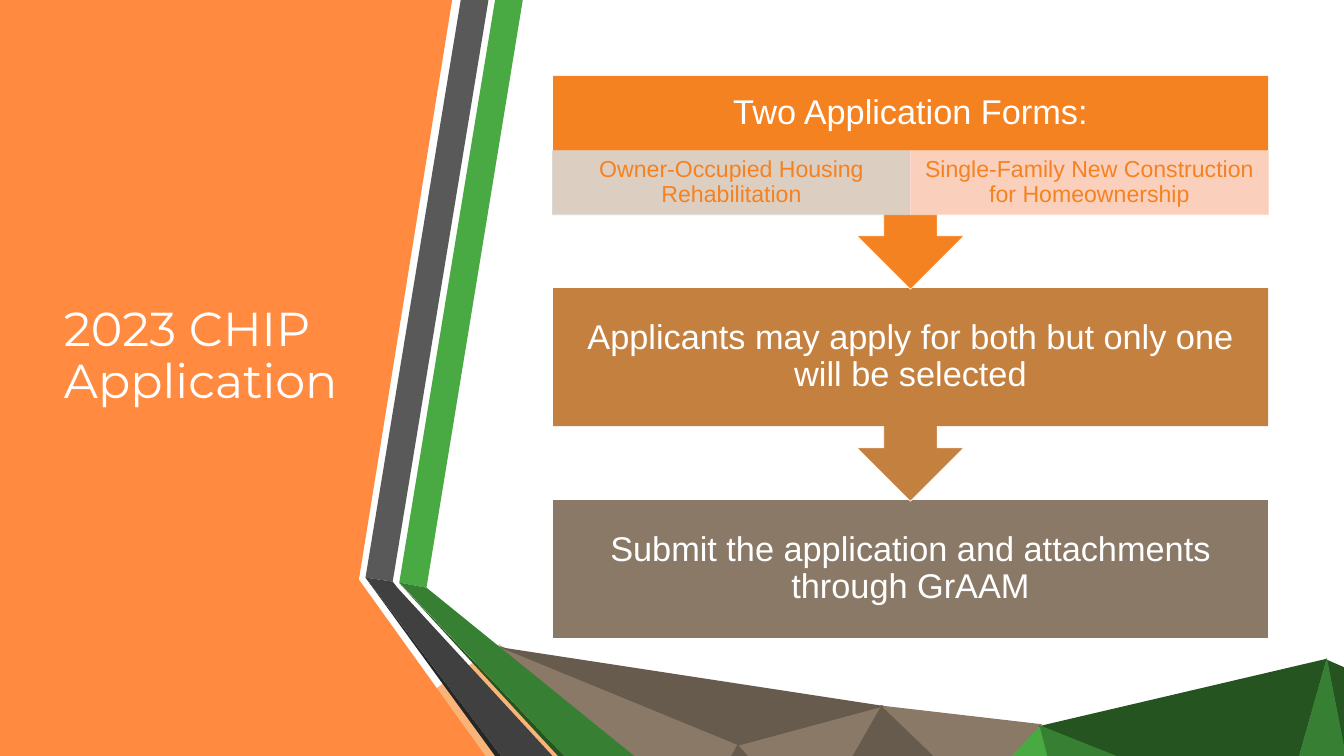
"""Build the 2023 CHIP Application slide."""
import pptx
import pptx.dml.color
import pptx.enum.shapes
import pptx.enum.text
import pptx.oxml.ns
import pptx.util
from lxml import etree

Inches = pptx.util.Inches
Shapes = pptx.enum.shapes.MSO_SHAPE
Align = pptx.enum.text.PP_ALIGN

WHITE, ORANGE, BRONZE, TAUPE = "FFFFFF", "F58220", "C4803F", "8A7967"
UMBER, GREEN, MID_GREEN, DARK_GREEN = "675B4D", "49A942", "377F32", "255421"

FACETS = [
    ("F9B479", [(11.94, 16.63), (9.91, 12.78), (7.42, 14.52), (10.49, 16.63)]),
    (TAUPE, [(13.62, 16.65), (14.66, 14.76), (9.91, 12.81), (11.94, 16.65)]),
    (TAUPE, [(14.61, 14.78), (16.1, 16.47), (17.51, 13.99)]),
    (UMBER, [(16.08, 16.46), (19.34, 15.79), (17.49, 13.99)]),
    (TAUPE, [(17.48, 14), (19.34, 15.79), (20.67, 14.37)]),
    (GREEN, [(21.24, 16.7), (20.64, 14.39), (19.31, 15.82), (20.27, 16.7)]),
    (DARK_GREEN, [(20.6, 14.41), (25.4, 16.32), (26.32, 13.07)]),
    (MID_GREEN, [(24.41, 16.7), (25.42, 16.3), (20.62, 14.39), (21.21, 16.7)]),
    (DARK_GREEN, [(26.8, 13.3), (26.32, 13.09), (26.8, 15.56)]),
    (MID_GREEN, [(26.8, 16.7), (26.8, 15.52), (26.32, 13.05), (25.4, 16.3), (26, 16.7)]),
    (UMBER, [(9.91, 12.84), (17.55, 14.01), (14.66, 14.79)]),
    (UMBER, [(15.71, 16.67), (16.11, 16.46), (14.63, 14.77), (13.59, 16.67)]),
]
TITLE_PANEL = ("FF8A40", [(0, 0), (8.97, 0), (7.12, 11.5), (9.63, 15), (0, 15)])
RIBBONS = [
    (GREEN, [(7.92, 11.56), (8.46, 11.66), (10.37, 0), (9.82, 0)]),
    ("595959", [(9.69, 0), (9.14, 0), (7.25, 11.46), (7.79, 11.54)]),
    ("262626", [(7.25, 11.46), (9.82, 15), (9.94, 15)]),
    (DARK_GREEN, [(7.92, 11.57), (11.07, 15), (11.19, 15)]),
    (MID_GREEN, [(7.92, 11.56), (11.19, 15), (12.58, 15), (8.46, 11.66)]),
    ("404040", [(10.96, 15), (7.89, 11.67), (7.79, 11.54), (7.25, 11.46), (9.94, 15)]),
]

STEP_LEFT, STEP_TOP, STEP_PITCH = 10.96, 1.5, 4.205
STEP_WIDTH, STEP_HEIGHT, CALLOUT_HEIGHT = 14.2, 2.76, 4.24
HEADING_HEIGHT, FORM_HEIGHT = 1.49, 1.27
FORM_WIDTH = STEP_WIDTH / 2


def rgb(colour):
    return pptx.dml.color.RGBColor.from_string(colour)


def write(box, text, font="Arial", size=49, colour=WHITE, align=Align.CENTER,
          inset=(0.38, 0.38)):
    frame = box.text_frame
    frame.word_wrap = True
    frame.vertical_anchor = pptx.enum.text.MSO_ANCHOR.MIDDLE
    frame.margin_left = frame.margin_right = Inches(inset[0])
    frame.margin_top = frame.margin_bottom = Inches(inset[1])
    para = frame.paragraphs[0]
    para.alignment = align
    para.line_spacing = 0.9
    span = para.add_run()
    span.text = text
    span.font.name = font
    span.font.size = pptx.util.Pt(size)
    span.font.color.rgb = rgb(colour)


class Painter:
    def __init__(self, page, outline_width=1):
        self.page = page
        self.outline_width = pptx.util.Pt(outline_width)

    def polygon(self, colour, points):
        corners = [(Inches(x), Inches(y)) for x, y in points]
        builder = self.page.shapes.build_freeform(*corners[0], scale=1.0)
        builder.add_line_segments(corners[1:], close=True)
        shape = builder.convert_to_shape()
        shape.shadow.inherit = False
        shape.fill.solid()
        shape.fill.fore_color.rgb = rgb(colour)
        shape.line.fill.background()

    def block(self, kind, area, fill, outline=WHITE, rotation=0, opacity=100):
        shape = self.page.shapes.add_shape(kind, *map(Inches, area))
        shape.shadow.inherit = False
        shape.rotation = rotation
        shape.fill.solid()
        shape.fill.fore_color.rgb = rgb(fill)
        shape.line.color.rgb = rgb(outline)
        shape.line.width = self.outline_width
        if opacity < 100:
            properties = shape.fill._xPr
            for colour in properties.iter(pptx.oxml.ns.qn("a:srgbClr")):
                alpha = etree.SubElement(colour, pptx.oxml.ns.qn("a:alpha"))
                alpha.set("val", str(opacity * 1000))
        return shape

    def label(self, area, text, **style):
        write(self.page.shapes.add_textbox(*map(Inches, area)), text, **style)


def main():
    deck = pptx.Presentation()
    deck.slide_width, deck.slide_height = Inches(26.66), Inches(15)
    painter = Painter(deck.slides.add_slide(deck.slide_layouts[6]))

    for colour, points in [*FACETS, TITLE_PANEL, *RIBBONS]:
        painter.polygon(colour, points)
    painter.label((1.17, 1.5, 6.08, 11.17), "2023 CHIP Application", font="Montserrat",
                  size=68, align=Align.LEFT, inset=(0.1, 0.05))

    first, second, third = [STEP_TOP + i * STEP_PITCH for i in range(3)]
    last_step = painter.block(Shapes.RECTANGLE,
                              (STEP_LEFT, third, STEP_WIDTH, STEP_HEIGHT), TAUPE)
    write(last_step, "Submit the application and attachments through GrAAM")

    for top, height, fill, text in [
        (second, STEP_HEIGHT, BRONZE,
         "Applicants may apply for both but only one will be selected"),
        (first, HEADING_HEIGHT, ORANGE, "Two Application Forms:"),
    ]:
        painter.block(Shapes.UP_ARROW_CALLOUT,
                      (STEP_LEFT, top, STEP_WIDTH, CALLOUT_HEIGHT), fill, rotation=180)
        painter.label((STEP_LEFT, top, STEP_WIDTH, height), text)

    for column, (fill, text) in enumerate([
        ("DAD7D3", "Owner-Occupied Housing Rehabilitation"),
        ("FBD8CC", "Single-Family New Construction for Homeownership"),
    ]):
        area = (STEP_LEFT + column * FORM_WIDTH, first + HEADING_HEIGHT,
                FORM_WIDTH, FORM_HEIGHT)
        form = painter.block(Shapes.RECTANGLE, area, fill, outline=fill, opacity=90)
        write(form, text, size=33, colour=ORANGE, inset=(0.26, 0.05))

    deck.save("out.pptx")


if __name__ == "__main__":
    main()
